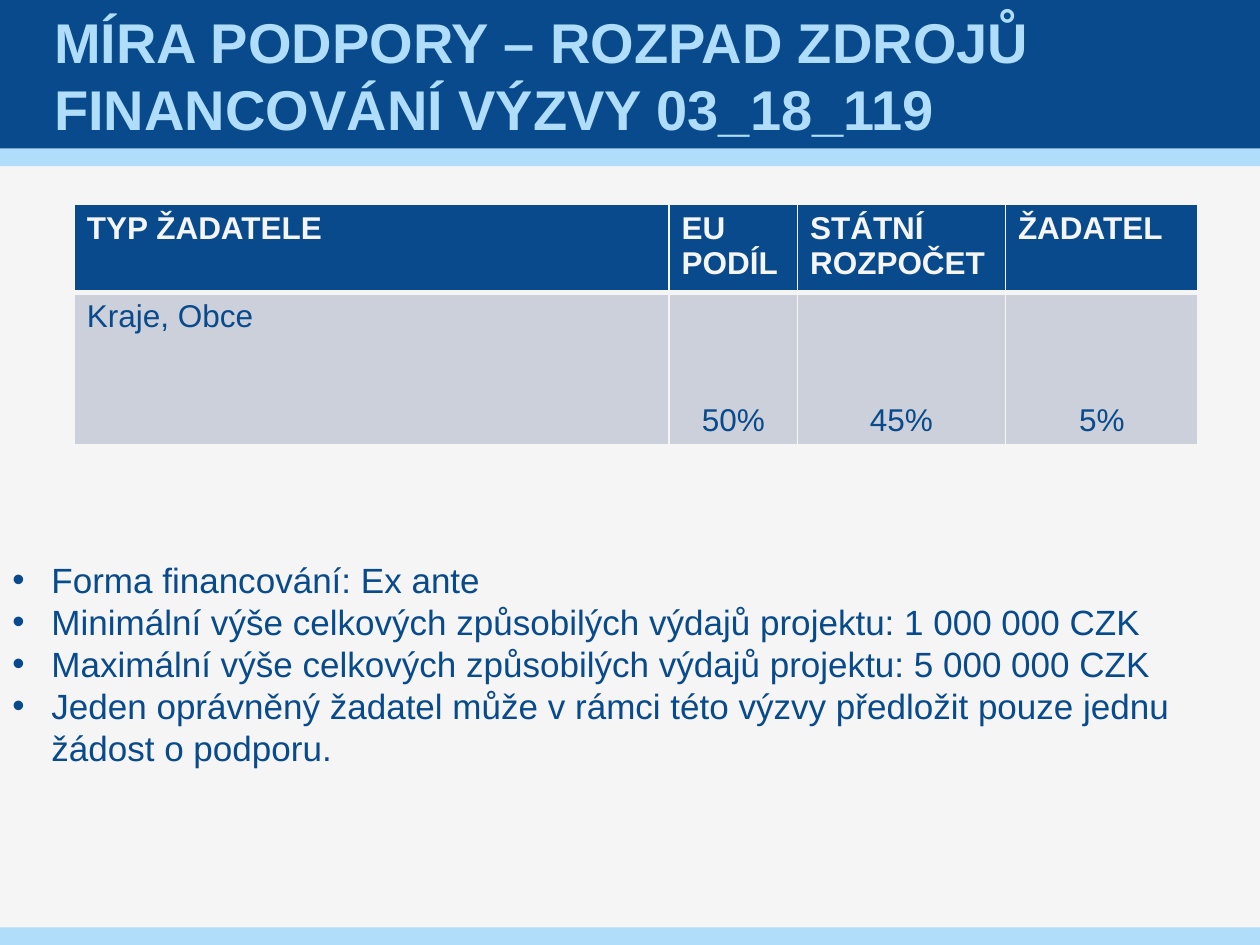
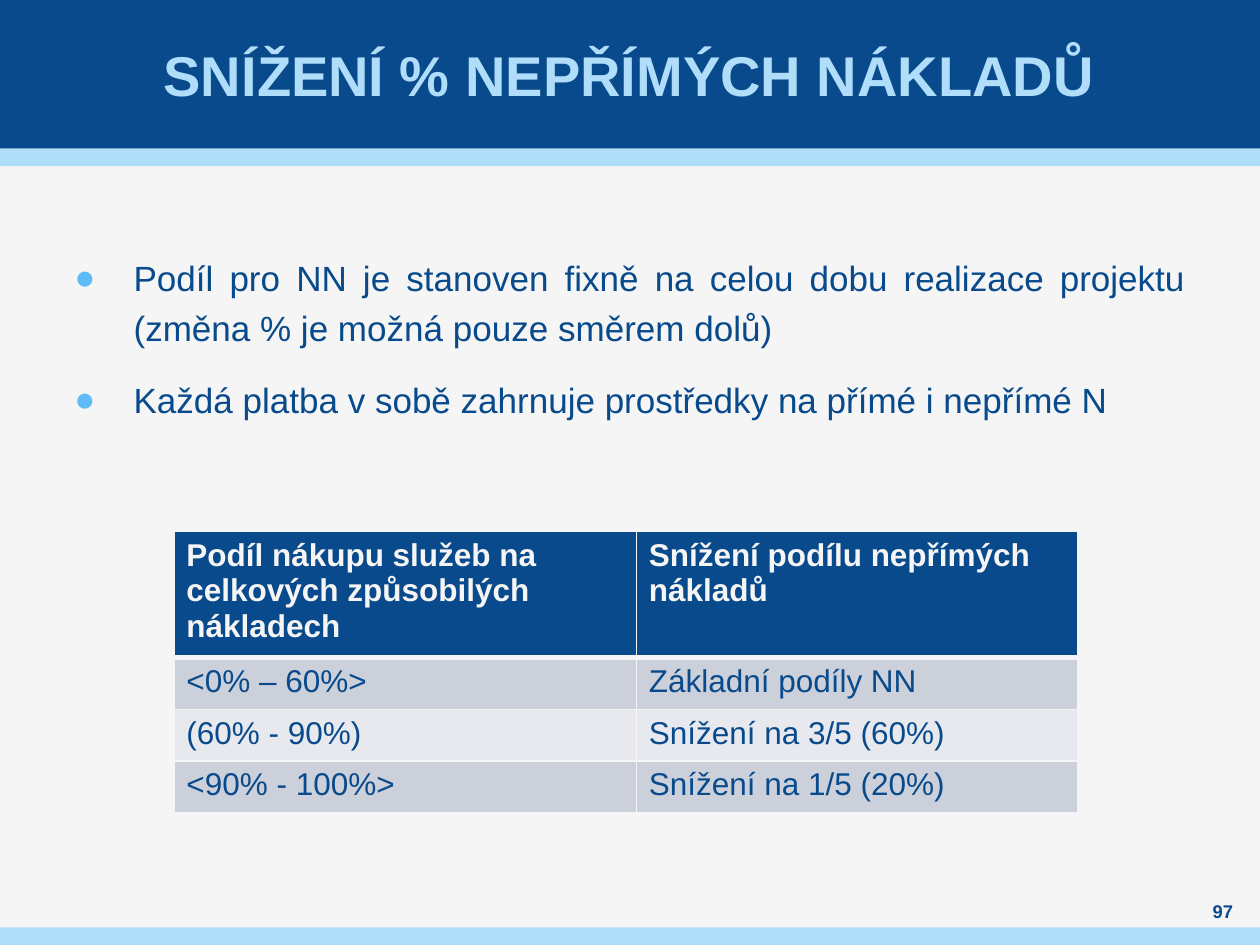
from dataclasses import dataclass
from typing import NamedTuple

from lxml import etree
from pptx import Presentation
from pptx import util as u
from pptx.dml.color import RGBColor
from pptx.enum import shapes, text
from pptx.oxml import ns


@dataclass(frozen=True)
class Theme:
    font: str = "Arial"
    paper: str = "F5F5F5"
    navy: str = "084A8B"
    sky: str = "AFDDFA"
    bullet: str = "5FBBF5"
    row_fills: tuple = ("CCD0DA", "E7E9EE")
    title_size: float = 32
    body_size: float = 20
    table_size: float = 18
    number_size: float = 10.5
    thin: float = 1
    thick: float = 3


class Box(NamedTuple):
    left: float
    top: float
    width: float
    height: float

    def lengths(self):
        return [u.Inches(value) for value in self]


THEME = Theme()
PAGE = Box(0, 0, 10, 7.5)
HEADER_HEIGHT = 1.18
STRIPE_HEIGHT = 0.14
LEFT, CENTER = text.PP_ALIGN.LEFT, text.PP_ALIGN.CENTER
TOP, MIDDLE, BOTTOM = (text.MSO_ANCHOR.TOP, text.MSO_ANCHOR.MIDDLE,
                       text.MSO_ANCHOR.BOTTOM)


def add_bullet(para, mark, indent, color=None):
    properties = para._p.get_or_add_pPr()
    properties.set("marL", str(u.Inches(indent)))
    properties.set("indent", str(-u.Inches(indent)))
    if color:
        holder = etree.SubElement(properties, ns.qn("a:buClr"))
        etree.SubElement(holder, ns.qn("a:srgbClr"), val=color)
    etree.SubElement(properties, ns.qn("a:buFont"), typeface=THEME.font)
    etree.SubElement(properties, ns.qn("a:buChar"), char=mark)


def write(frame, *lines, size=THEME.body_size, color=THEME.navy, bold=False,
          align=LEFT, leading=None, gap=0, bullet=None):
    """Fill a text frame, one paragraph a line; bullet holds add_bullet's options."""
    for index, line in enumerate(lines):
        para = frame.add_paragraph() if index else frame.paragraphs[0]
        para.alignment = align
        para.space_before = para.space_after = u.Pt(gap)
        if leading:
            para.line_spacing = u.Pt(leading)
        if bullet:
            add_bullet(para, **bullet)
        span = para.add_run()
        span.text = line
        span.font.name = THEME.font
        span.font.size = u.Pt(size)
        span.font.bold = bold
        span.font.color.rgb = RGBColor.from_string(color)


def add_text(page, box, *lines, anchor=TOP, insets=(0, 0), **style):
    """Add a text box; insets are horizontal and vertical, in inches."""
    frame = page.shapes.add_textbox(*box.lengths()).text_frame
    frame.word_wrap = True
    frame.vertical_anchor = anchor
    frame.margin_left = frame.margin_right = u.Inches(insets[0])
    frame.margin_top = frame.margin_bottom = u.Inches(insets[1])
    write(frame, *lines, **style)


def add_band(page, box, color):
    band = page.shapes.add_shape(shapes.MSO_SHAPE.RECTANGLE, *box.lengths())
    band.shadow.inherit = False
    band.fill.solid()
    band.fill.fore_color.rgb = RGBColor.from_string(color)
    band.line.fill.background()


def add_page(deck, title, align=LEFT):
    """Add a slide with the shared background, bands and title."""
    page = deck.slides.add_slide(deck.slide_layouts[6])
    page.background.fill.solid()
    page.background.fill.fore_color.rgb = RGBColor.from_string(THEME.paper)
    header = Box(0, 0, PAGE.width, HEADER_HEIGHT)
    add_band(page, header, THEME.navy)
    for top in (HEADER_HEIGHT, PAGE.height - STRIPE_HEIGHT):
        add_band(page, Box(0, top, PAGE.width, STRIPE_HEIGHT), THEME.sky)
    add_text(page, header._replace(left=0.39, width=9.21), title,
             anchor=MIDDLE, insets=(0.04, 0), align=align,
             size=THEME.title_size, color=THEME.sky, bold=True)
    return page


def set_borders(cell, top, bottom):
    """Draw all four borders; top and bottom are widths in points."""
    properties = cell._tc.get_or_add_tcPr()
    widths = {"lnL": THEME.thin, "lnR": THEME.thin, "lnT": top, "lnB": bottom}
    for index, (side, width) in enumerate(widths.items()):
        line = etree.Element(ns.qn(f"a:{side}"), w=str(u.Pt(width)))
        fill = etree.SubElement(line, ns.qn("a:solidFill"))
        etree.SubElement(fill, ns.qn("a:srgbClr"), val=THEME.paper)
        properties.insert(index, line)


def add_table(page, left, top, widths, heights, rows, centered=False):
    """Add a table with a header row; centered sets body figures at the cell foot."""
    box = Box(left, top, sum(widths), sum(heights))
    table = page.shapes.add_table(len(rows), len(widths), *box.lengths()).table
    table.horz_banding = False
    for column, width in zip(table.columns, widths):
        column.width = u.Inches(width)
    for index, (row, height, values) in enumerate(zip(table.rows, heights, rows)):
        row.height = u.Inches(height)
        header = index == 0
        fill = THEME.navy if header else THEME.row_fills[(index - 1) % 2]
        for position, (cell, value) in enumerate(zip(row.cells, values)):
            figure = centered and position > 0 and not header
            cell.fill.solid()
            cell.fill.fore_color.rgb = RGBColor.from_string(fill)
            cell.vertical_anchor = BOTTOM if figure else TOP
            set_borders(cell, THEME.thick if index == 1 else THEME.thin,
                        THEME.thick if header else THEME.thin)
            write(cell.text_frame, value, size=THEME.table_size, bold=header,
                  color=THEME.paper if header else THEME.navy,
                  align=CENTER if figure else LEFT)


def add_funding_page(deck):
    page = add_page(deck, "MÍRA PODPORY – ROZPAD ZDROJŮ FINANCOVÁNÍ VÝZVY 03_18_119")
    add_table(page, 0.59, 1.62, (4.72, 1.02, 1.65, 1.53), (0.66, 1.21), (
        ("TYP ŽADATELE", "EU PODÍL", "STÁTNÍ ROZPOČET", "ŽADATEL"),
        ("Kraje, Obce", "50%", "45%", "5%"),
    ), centered=True)
    add_text(
        page, Box(0, 4.38, PAGE.width, 2.46),
        "Forma financování: Ex ante",
        "Minimální výše celkových způsobilých výdajů projektu: 1 000 000 CZK",
        "Maximální výše celkových způsobilých výdajů projektu: 5 000 000 CZK",
        "Jeden oprávněný žadatel může v rámci této výzvy předložit pouze jednu "
        "žádost o podporu.",
        insets=(0.1, 0.05), bullet={"mark": "•", "indent": 0.31})


def add_indirect_costs_page(deck):
    page = add_page(deck, "SNÍŽENÍ % NEPŘÍMÝCH NÁKLADŮ", align=CENTER)
    add_text(
        page, Box(0.59, 1.97, 8.82, 5.17),
        "Podíl pro NN je stanoven fixně na celou dobu realizace projektu "
        "(změna % je možná pouze směrem dolů)",
        "Každá platba v sobě zahrnuje prostředky na přímé i nepřímé N",
        align=text.PP_ALIGN.JUSTIFY, leading=28.8, gap=6,
        bullet={"mark": "●", "indent": 0.47, "color": THEME.bullet})
    add_text(page, Box(9.45, 7.13, 0.51, 0.2), "97", anchor=MIDDLE,
             align=CENTER, size=THEME.number_size, bold=True)
    add_table(page, 1.38, 4.22, (3.67, 3.5), (0.93, 0.41, 0.41, 0.41), (
        ("Podíl nákupu služeb na celkových způsobilých nákladech",
         "Snížení podílu nepřímých nákladů"),
        ("<0% – 60%>", "Základní podíly NN"),
        ("(60% - 90%)", "Snížení na 3/5 (60%)"),
        ("<90% - 100%>", "Snížení na 1/5 (20%)"),
    ))


def main():
    deck = Presentation()
    deck.slide_width = u.Inches(PAGE.width)
    deck.slide_height = u.Inches(PAGE.height)
    add_funding_page(deck)
    add_indirect_costs_page(deck)
    deck.save("out.pptx")


if __name__ == "__main__":
    main()
